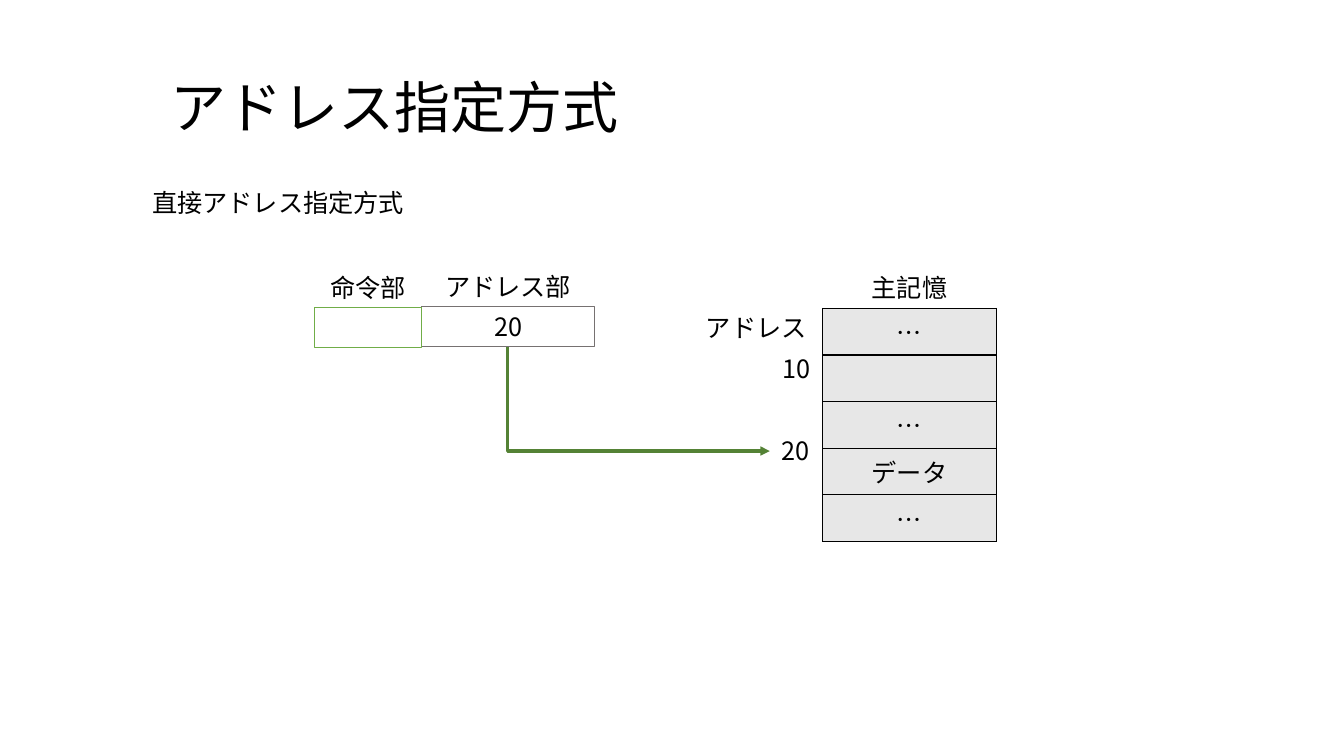
"""Build a slide that explains direct addressing of main memory."""
from pptx import Presentation
from pptx.dml.color import RGBColor
from pptx.enum.shapes import MSO_CONNECTOR as Link, MSO_SHAPE as Preset
from pptx.enum.text import MSO_ANCHOR as Anchor, MSO_AUTO_SIZE as AutoSize, PP_ALIGN as Align
from pptx.oxml.ns import qn
from pptx.util import Inches, Pt
from lxml.etree import SubElement

FONT = "Noto Sans CJK JP"
BLACK = RGBColor(0x00, 0x00, 0x00)
GRAY = RGBColor(0x76, 0x71, 0x71)
LIGHT_GRAY = RGBColor(0xE7, 0xE7, 0xE7)
GREEN = RGBColor(0x70, 0xAD, 0x47)
DARK_GREEN = RGBColor(0x54, 0x82, 0x35)


def write(frame, text, align=Align.CENTER, size=18):
    frame.text = text
    paragraph = frame.paragraphs[0]
    paragraph.alignment = align
    font = paragraph.font
    font.name, font.size = FONT, Pt(size)
    font.color.rgb = BLACK
    defaults = paragraph._p.pPr.find(qn("a:defRPr"))
    SubElement(defaults, qn("a:ea"), typeface=FONT)


prs = Presentation()
prs.slide_width, prs.slide_height = Inches(13.33), Inches(7.5)
slide = prs.slides.add_slide(prs.slide_layouts[5])
shapes = slide.shapes

title = shapes.title
title.left, title.top = Inches(1.59), Inches(0.67)
title.width, title.height = Inches(6.41), Inches(0.77)
write(title.text_frame, "アドレス指定方式", Align.LEFT, 40)
title.text_frame.vertical_anchor = Anchor.TOP
title.text_frame.auto_size = AutoSize.NONE

memory_rows = [("…", 0.41), ("", 0.46), ("…", 0.41), ("データ", 0.46), ("…", 0.41)]
memory = shapes.add_table(len(memory_rows), 1, Inches(8.16), Inches(3.06),
                          Inches(1.72), Inches(2.15)).table
memory.first_row = memory.horz_banding = False
for index, (content, height) in enumerate(memory_rows):
    memory.rows[index].height = Inches(height)
    cell = memory.cell(index, 0)
    write(cell.text_frame, content)
    properties = cell._tc.get_or_add_tcPr()
    for side in ("a:lnL", "a:lnR", "a:lnT", "a:lnB"):
        border = SubElement(properties, qn(side), w=str(Pt(1)))
        border_fill = SubElement(border, qn("a:solidFill"))
        SubElement(border_fill, qn("a:srgbClr"), val=str(BLACK))
    cell.fill.solid()
    cell.fill.fore_color.rgb = LIGHT_GRAY
    if content == "…":
        properties.set("vert", "eaVert")
        cell.vertical_anchor = Anchor.BOTTOM

labels = [
    ("直接アドレス指定方式", 1.41, 1.81, 8.96, Align.LEFT),
    ("主記憶", 8.44, 2.65, 1.16, Align.CENTER),
    ("アドレス", 6.84, 3.05, 1.32, Align.CENTER),
    ("10", 7.65, 3.46, 0.5, Align.CENTER),
    ("20", 7.64, 4.27, 0.5, Align.CENTER),
    ("アドレス部", 4.18, 2.64, 1.72, Align.CENTER),
    ("命令部", 3.12, 2.65, 1.06, Align.CENTER),
]
for text, left, top, width, align in labels:
    label = shapes.add_textbox(Inches(left), Inches(top), Inches(width), Inches(0.4))
    label.text_frame.word_wrap = True
    write(label.text_frame, text, align)

instruction_parts = [("20", 4.18, 3.04, 1.72, GRAY), ("", 3.12, 3.05, 1.06, GREEN)]
for text, left, top, width, color in instruction_parts:
    part = shapes.add_shape(Preset.RECTANGLE, Inches(left), Inches(top),
                            Inches(width), Inches(0.4))
    part.shadow.inherit = False
    part.fill.background()
    part.line.color.rgb = color
    part.line.width = Pt(0.75)
    write(part.text_frame, text)

reference = shapes.add_connector(Link.ELBOW, Inches(6.85), Inches(2.66),
                                 Inches(5.82), Inches(5.26))
reference.line.color.rgb = DARK_GREEN
reference.line.width = Pt(2.25)
outline = reference._element.spPr
outline.find(qn("a:xfrm")).set("rot", "16200000")
outline.find(qn("a:prstGeom")).set("prst", "bentConnector2")
SubElement(outline.find(qn("a:ln")), qn("a:tailEnd"), type="triangle")
SubElement(outline, qn("a:effectLst"))

prs.save("out.pptx")
